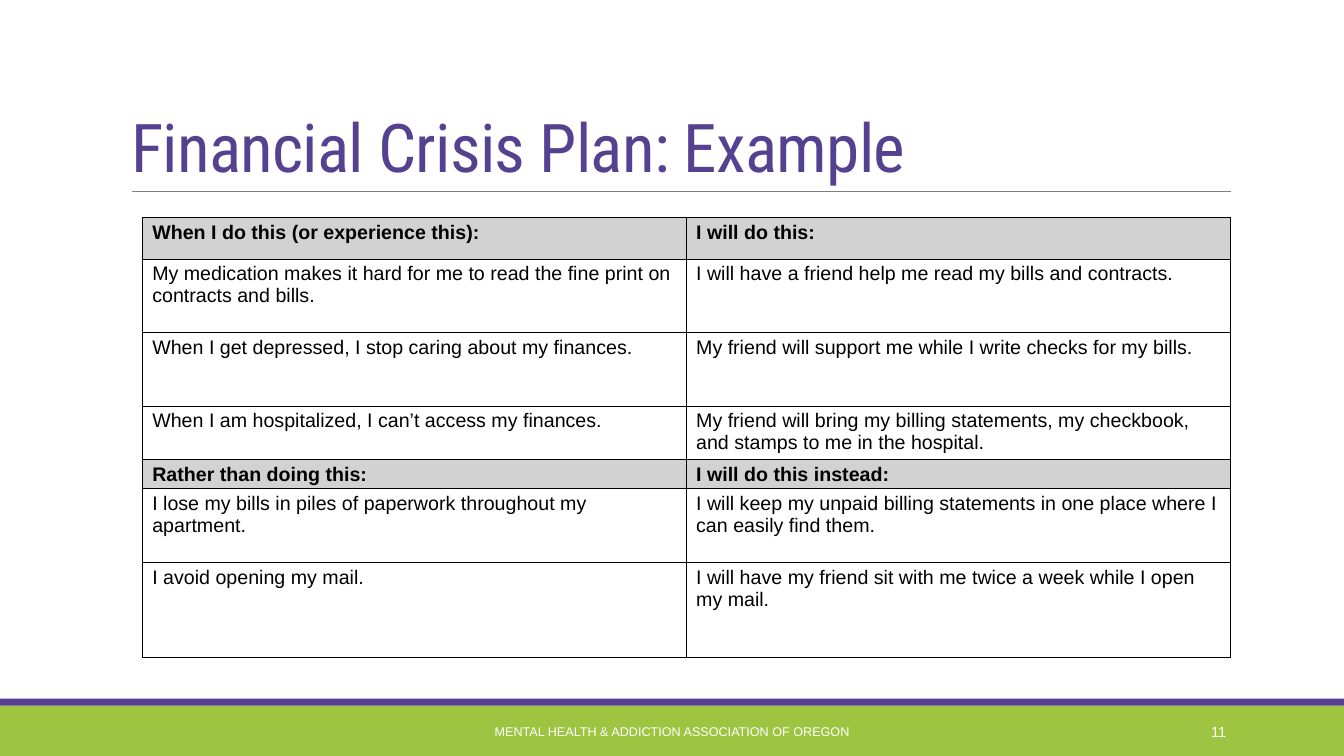
from lxml import etree
from pptx import Presentation
from pptx.dml.color import RGBColor
from pptx.enum.shapes import MSO_CONNECTOR, MSO_SHAPE
from pptx.enum.text import MSO_ANCHOR, MSO_AUTO_SIZE, PP_ALIGN
from pptx.oxml.ns import qn
from pptx.util import Inches, Pt

STRAIGHT = MSO_CONNECTOR.STRAIGHT
RECTANGLE = MSO_SHAPE.RECTANGLE
MIDDLE, BOTTOM = MSO_ANCHOR.MIDDLE, MSO_ANCHOR.BOTTOM
NO_FIT = MSO_AUTO_SIZE.NONE
LEFT, CENTER, RIGHT = PP_ALIGN.LEFT, PP_ALIGN.CENTER, PP_ALIGN.RIGHT

PURPLE, GREEN, GRAY = "564191", "9DC541", "808080"
HEADER_GRAY, BLACK, WHITE = "D2D2D2", "000000", "FFFFFF"

PLAN_SECTIONS = [
    (("When I do this (or experience this):", "I will do this:"), 5.47, [
        ("My medication makes it hard for me to read the fine print on contracts and bills.",
         "I will have a friend help me read my bills and contracts.", 9.73),
        ("When I get depressed, I stop caring about my finances.",
         "My friend will support me while I write checks for my bills.", 9.73),
        ("When I am hospitalized, I can’t access my finances.",
         "My friend will bring my billing statements, my checkbook, "
         "and stamps to me in the hospital.", 7.07),
    ]),
    (("Rather than doing this:", "I will do this instead:"), 3.87, [
        ("I lose my bills in piles of paperwork throughout my apartment.",
         "I will keep my unpaid billing statements in one place where I can easily find them.",
         9.73),
        ("I avoid opening my mail.",
         "I will have my friend sit with me twice a week while I open my mail.", 12.6),
    ]),
]


def color(value):
    return RGBColor.from_string(value)


class SlideBuilder:
    """Draws styled elements on one slide, placed by percent of its size."""

    def __init__(self, deck, heading_font, body_font):
        self.deck = deck
        self.heading_font = heading_font
        self.body_font = body_font
        self.slide = deck.slides.add_slide(deck.slide_layouts[5])

    def across(self, percent):
        return round(self.deck.slide_width * percent / 100)

    def down(self, percent):
        return round(self.deck.slide_height * percent / 100)

    def area(self, left, top, width, height):
        return self.across(left), self.down(top), self.across(width), self.down(height)

    def add_span(self, para, text, size, shade, bold=False, font=None):
        span = para.add_run()
        span.text = text
        span.font.name = font or self.body_font
        span.font.size = Pt(size)
        span.font.bold = bold
        span.font.color.rgb = color(shade)
        return span

    def band(self, top, height, shade):
        bar = self.slide.shapes.add_shape(RECTANGLE, *self.area(0, top, 100, height))
        bar.shadow.inherit = False
        bar.fill.solid()
        bar.fill.fore_color.rgb = color(shade)
        bar.line.fill.background()

    def rule(self, left, right, top, shade):
        line = self.slide.shapes.add_connector(
            STRAIGHT, self.across(left), self.down(top), self.across(right), self.down(top))
        line.line.color.rgb = color(shade)
        line.line.width = Pt(0.5)
        etree.SubElement(line._element.spPr, qn("a:effectLst"))

    def title(self, text, area):
        box = self.slide.shapes.title
        box.left, box.top, box.width, box.height = self.area(*area)
        frame = box.text_frame
        frame.word_wrap = True
        frame.auto_size = NO_FIT
        frame.vertical_anchor = BOTTOM
        para = frame.paragraphs[0]
        para.alignment = LEFT
        para.line_spacing = 0.85
        span = self.add_span(para, text, 48, PURPLE, font=self.heading_font)
        span.font._element.set("spc", "-50")

    def label(self, text, area, size, alignment):
        box = self.slide.shapes.add_textbox(*self.area(*area))
        frame = box.text_frame
        frame.word_wrap = True
        frame.vertical_anchor = MIDDLE
        para = frame.paragraphs[0]
        para.alignment = alignment
        self.add_span(para, text, size, WHITE)

    def border(self, cell):
        properties = cell._tc.get_or_add_tcPr()
        for side in ("a:lnL", "a:lnR", "a:lnT", "a:lnB"):
            edge = etree.SubElement(properties, qn(side), w=str(Pt(0.5)))
            fill = etree.SubElement(edge, qn("a:solidFill"))
            etree.SubElement(fill, qn("a:srgbClr"), val=BLACK)

    def cell(self, cell, text, header):
        cell.margin_left = cell.margin_right = Inches(0.1)
        cell.margin_top, cell.margin_bottom = Inches(0.04), Inches(0.03)
        self.border(cell)
        cell.fill.solid()
        cell.fill.fore_color.rgb = color(HEADER_GRAY if header else WHITE)
        self.add_span(cell.text_frame.paragraphs[0], text, 14, BLACK, bold=header)

    def table(self, sections, left, top, width):
        rows = []
        for headings, heading_height, entries in sections:
            rows.append((headings, heading_height, True))
            rows += [((trigger, action), height, False) for trigger, action, height in entries]
        total = sum(height for _, height, _ in rows)
        frame = self.slide.shapes.add_table(len(rows), 2, *self.area(left, top, width, total))
        plan = frame.table
        plan.first_row = plan.horz_banding = False
        for column in plan.columns:
            column.width = self.across(width / 2)
        for row, (texts, height, header) in zip(plan.rows, rows):
            row.height = self.down(height)
            for cell, text in zip(row.cells, texts):
                self.cell(cell, text, header)


def main():
    deck = Presentation()
    deck.slide_width, deck.slide_height = Inches(13.33), Inches(7.5)
    page = SlideBuilder(deck, "Roboto Condensed", "Arial")
    page.band(93.33, 6.67, GREEN)
    page.band(92.4, 0.93, PURPLE)
    page.rule(9.83, 91.6, 25.33, GRAY)
    page.title("Financial Crisis Plan: Example", (9, 4.13, 82.52, 21.2))
    page.table(PLAN_SECTIONS, 10.58, 28.8, 80.94)
    page.label("MENTAL HEALTH & ADDICTION ASSOCIATION OF OREGON",
               (30.23, 94.13, 39.53, 5.33), 9, CENTER)
    page.label("11", (81.25, 94.13, 10.73, 5.33), 10.5, RIGHT)
    deck.save("out.pptx")


if __name__ == "__main__":
    main()
